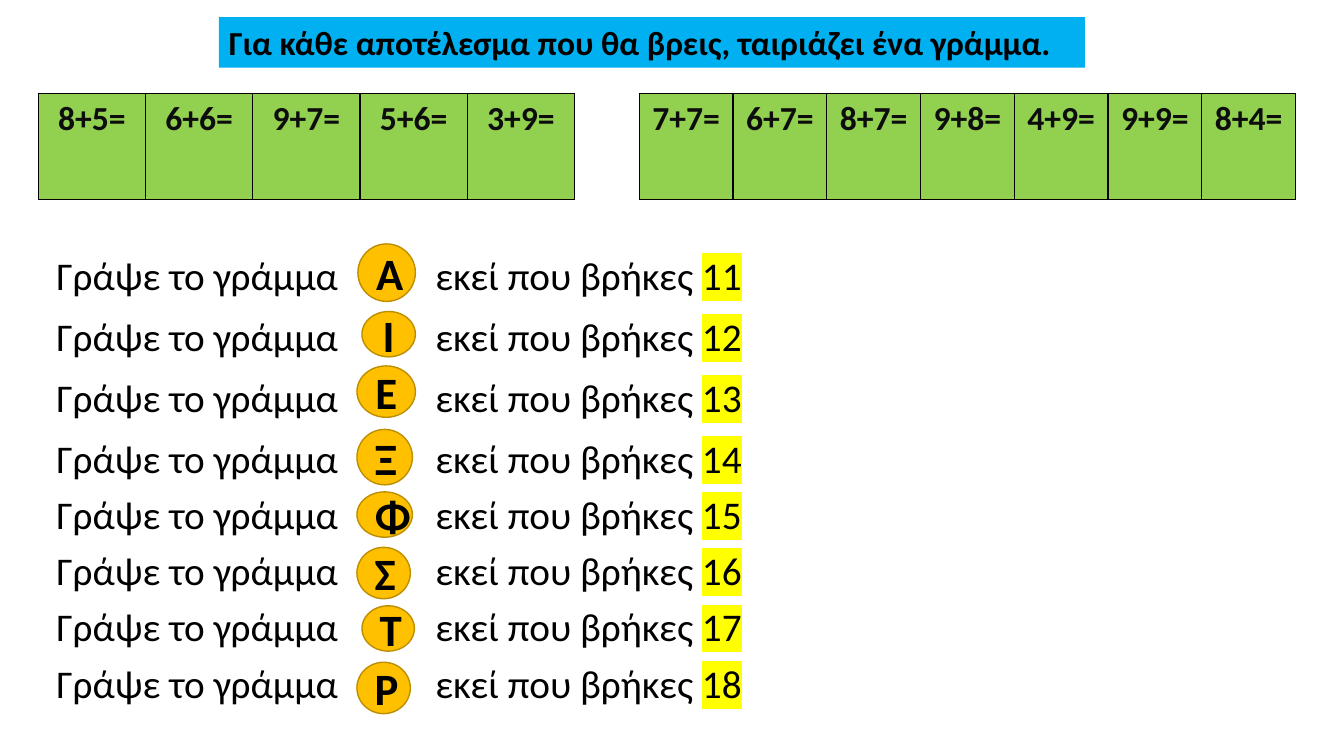
from typing import NamedTuple

from lxml.etree import SubElement
from pptx import Presentation
from pptx.dml.color import RGBColor
from pptx.enum.shapes import MSO_SHAPE
from pptx.enum.text import MSO_ANCHOR, MSO_AUTO_SIZE, PP_ALIGN
from pptx.oxml import parse_xml
from pptx.oxml.ns import nsdecls, qn
from pptx.util import Inches, Pt

FONT = "Calibri"
BLACK = RGBColor(0x00, 0x00, 0x00)
INK = RGBColor(0x0D, 0x0D, 0x0D)
BLUE = RGBColor(0x00, 0xB0, 0xF0)
GREEN = RGBColor(0x92, 0xD0, 0x50)
GOLD = RGBColor(0xFF, 0xC0, 0x00)
BROWN = RGBColor(0xBD, 0x8E, 0x00)
YELLOW = RGBColor(0xFF, 0xFF, 0x00)
GAP = 6330  # extra width of the space under a badge, in 1/100 pt


class Badge(NamedTuple):
    letter: str
    left: float
    top: float
    width: float
    height: float


class Sums(NamedTuple):
    left: float
    width: float
    tasks: list[str]


# Letters in the order of the results 11 to 18
BADGES = [
    Badge("Α", 3.55, 2.42, 0.57, 0.57),
    Badge("Ι", 3.59, 3.09, 0.53, 0.45),
    Badge("Ε", 3.54, 3.63, 0.58, 0.51),
    Badge("Ξ", 3.54, 4.26, 0.55, 0.55),
    Badge("Φ", 3.54, 4.88, 0.55, 0.45),
    Badge("Σ", 3.54, 5.43, 0.53, 0.51),
    Badge("Τ", 3.59, 6.01, 0.52, 0.45),
    Badge("Ρ", 3.54, 6.57, 0.53, 0.51),
]
TABLES = [
    Sums(0.38, 5.32, ["8+5=", "6+6=", "9+7=", "5+6=", "3+9="]),
    Sums(6.34, 6.51, ["7+7=", "6+7=", "8+7=", "9+8=", "4+9=", "9+9=", "8+4="]),
]


def place(shape, left: float, top: float, width: float, height: float) -> None:
    shape.left, shape.top = Inches(left), Inches(top)
    shape.width, shape.height = Inches(width), Inches(height)


def style(run, size: int, color: RGBColor, bold: bool = False) -> None:
    run.font.name = FONT
    run.font.size = Pt(size)
    run.font.bold = bold
    run.font.color.rgb = color


def mark(run, color: RGBColor) -> None:
    """Highlight a run that already has its colour."""
    light = parse_xml(
        f'<a:highlight {nsdecls("a")}><a:srgbClr val="{color}"/></a:highlight>')
    run.font._element.find(qn("a:solidFill")).addnext(light)


def add_title(slide) -> None:
    title = slide.shapes.title
    place(title, 2.17, 0.17, 8.59, 0.5)
    title.fill.solid()
    title.fill.fore_color.rgb = BLUE
    frame = title.text_frame
    frame.text = "Για κάθε αποτέλεσμα που θα βρεις, ταιριάζει ένα γράμμα."
    frame.auto_size = MSO_AUTO_SIZE.NONE
    frame.vertical_anchor = MSO_ANCHOR.TOP
    frame.paragraphs[0].alignment = PP_ALIGN.LEFT
    style(frame.paragraphs[0].runs[0], 24, BLACK, True)


def add_list(slide) -> None:
    body = slide.placeholders[1]
    place(body, 0.46, 2.44, 12.01, 4.95)
    frame = body.text_frame
    frame.text = "\n".join(["Γράψε το γράμμα"] * len(BADGES))
    frame.auto_size = MSO_AUTO_SIZE.NONE
    frame.vertical_anchor = MSO_ANCHOR.TOP
    for row, para in enumerate(frame.paragraphs):
        para.space_before = Pt(10)
        para.line_spacing = 1.0 if row < 4 else 0.9
        props = para._p.get_or_add_pPr()
        props.set("marL", "0")
        props.set("indent", "0")
        SubElement(props, qn("a:buNone"))
        # One wide space leaves room for the badge
        for words in (" ", "εκεί που βρήκες ", str(11 + row)):
            para.add_run().text = words
        for run in para.runs:
            style(run, 28, BLACK)
        para.runs[1].font._element.set("spc", str(GAP))
        mark(para.runs[-1], YELLOW)


def add_badge(slide, badge: Badge) -> None:
    box = [Inches(size) for size in badge[1:]]
    oval = slide.shapes.add_shape(MSO_SHAPE.OVAL, *box)
    oval.shadow.inherit = False
    oval.fill.solid()
    oval.fill.fore_color.rgb = GOLD
    oval.line.color.rgb = BROWN
    oval.line.width = Pt(1)
    frame = oval.text_frame
    frame.text = badge.letter
    frame.vertical_anchor = MSO_ANCHOR.MIDDLE
    frame.paragraphs[0].alignment = PP_ALIGN.CENTER
    style(frame.paragraphs[0].runs[0], 32, BLACK, True)


def add_edges(cell) -> None:
    props = cell._tc.get_or_add_tcPr()
    for spot, side in enumerate("LRTB"):
        props.insert(spot, parse_xml(
            f'<a:ln{side} {nsdecls("a")} w="{Pt(1)}"><a:solidFill>'
            f'<a:srgbClr val="{BLACK}"/></a:solidFill></a:ln{side}>'))


def add_sums(slide, sums: Sums) -> None:
    count = len(sums.tasks)
    table = slide.shapes.add_table(
        1, count, Inches(sums.left), Inches(0.93),
        Inches(sums.width), Inches(1.05)).table
    table.first_row = table.horz_banding = False
    for col, task in enumerate(sums.tasks):
        table.columns[col].width = Inches(sums.width / count)
        cell = table.cell(0, col)
        cell.fill.solid()
        cell.fill.fore_color.rgb = GREEN
        add_edges(cell)
        cell.text_frame.text = task
        para = cell.text_frame.paragraphs[0]
        para.alignment = PP_ALIGN.CENTER
        style(para.runs[0], 24, INK, True)


def main() -> None:
    deck = Presentation()
    deck.slide_width, deck.slide_height = Inches(13.33), Inches(7.5)
    slide = deck.slides.add_slide(deck.slide_layouts[1])
    add_title(slide)
    add_list(slide)
    for badge in BADGES:
        add_badge(slide, badge)
    for sums in TABLES:
        add_sums(slide, sums)
    deck.save("out.pptx")


if __name__ == "__main__":
    main()
